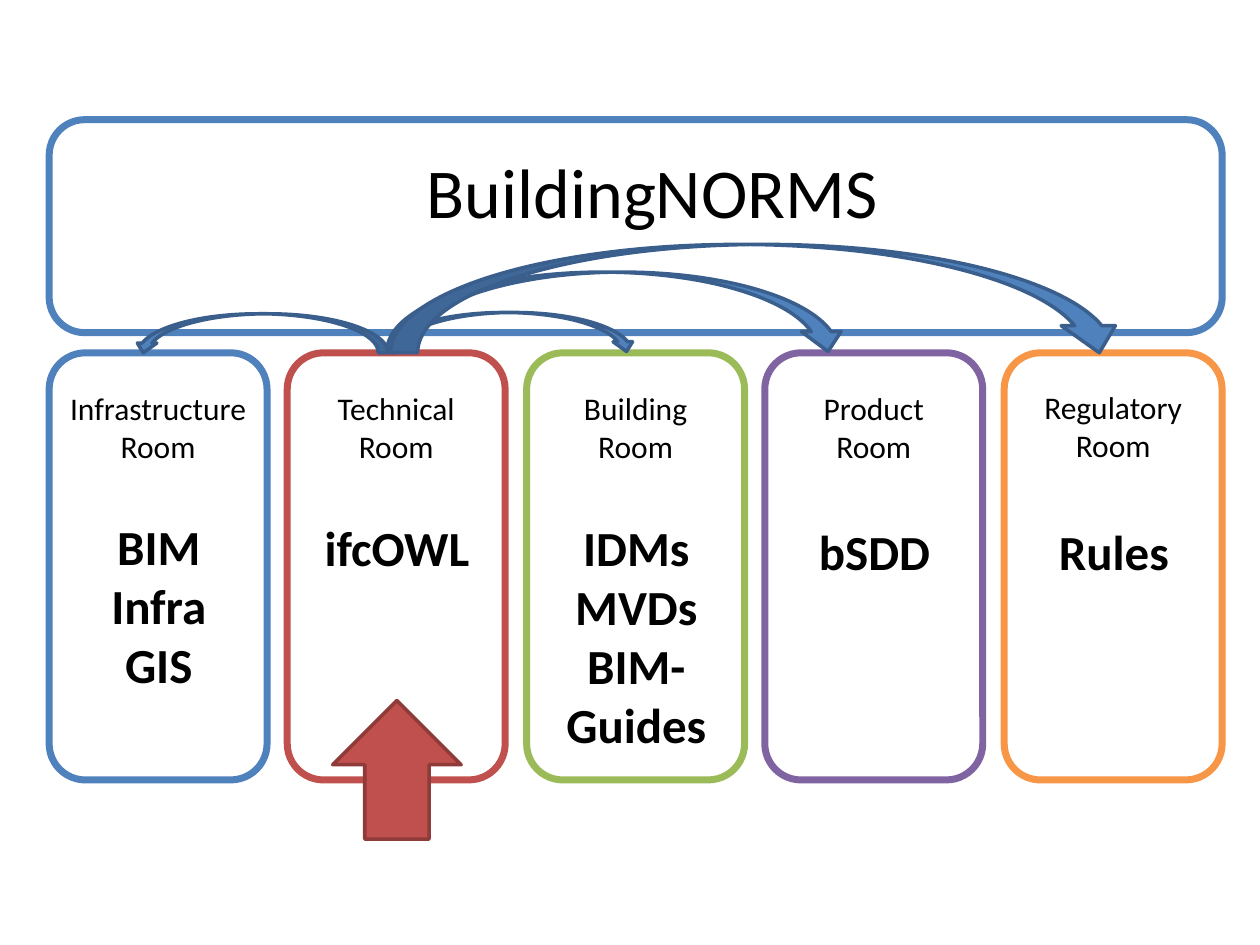
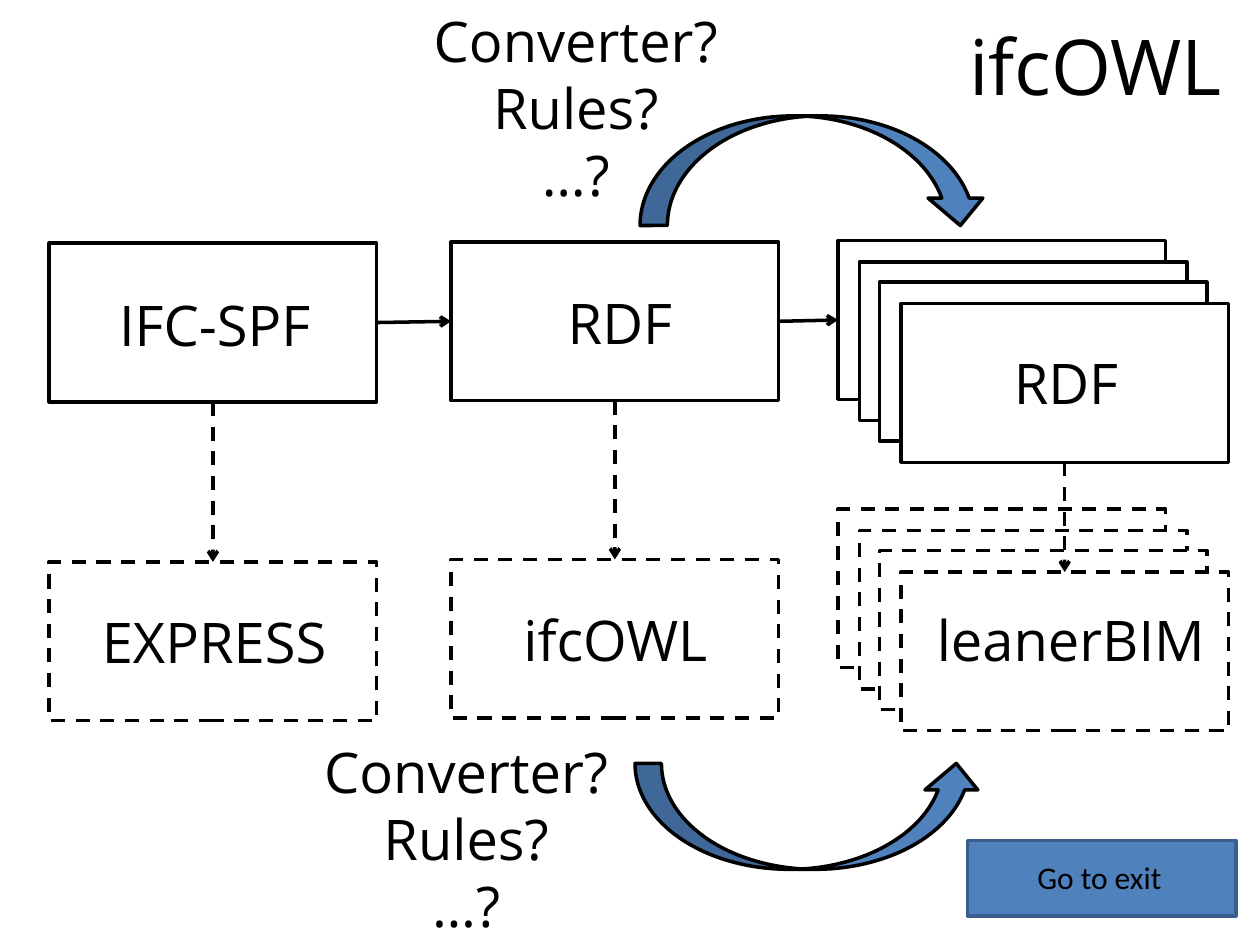
from dataclasses import dataclass
from typing import Optional

from lxml import etree
from pptx import Presentation
from pptx import util as u
from pptx.dml.color import RGBColor
from pptx.enum import dml, shapes, text
from pptx.oxml.ns import qn

# Shared scale, colours and fonts
PX = 9144  # EMU per px, 100 px to the inch
BLACK = RGBColor(0x00, 0x00, 0x00)
WHITE = RGBColor(0xFF, 0xFF, 0xFF)
BLUE = RGBColor(0x4F, 0x81, 0xBD)
DARK_BLUE = RGBColor(0x3A, 0x5F, 0x8C)
RED = RGBColor(0xC0, 0x50, 0x4D)
DARK_RED = RGBColor(0x8E, 0x3B, 0x39)
GREEN = RGBColor(0x9B, 0xBB, 0x59)
PURPLE = RGBColor(0x80, 0x64, 0xA2)
ORANGE = RGBColor(0xF7, 0x96, 0x46)
BODY_FONT, DIAGRAM_FONT = "Calibri", "Open Sans"
KIND = shapes.MSO_SHAPE


@dataclass(frozen=True)
class Box:
    x: int
    y: int
    w: int
    h: int

    def emu(self) -> tuple:
        return tuple(u.Emu(v * PX) for v in (self.x, self.y, self.w, self.h))


@dataclass(frozen=True)
class Room:
    name: str
    color: RGBColor
    topics: str
    name_y: int
    topics_y: int
    topics_h: int


@dataclass(frozen=True)
class Node:
    label: str
    label_box: Box
    x: int
    y: int
    dashed: bool = False
    copies: int = 1


@dataclass(frozen=True)
class Arc:
    box: Box
    flip: Optional[str] = None


# Drawing helpers
def add_block(slide, kind, box: Box, fill: Optional[RGBColor], line: RGBColor,
              width: int = 2, dashed: bool = False):
    sp = slide.shapes.add_shape(kind, *box.emu())
    sp.shadow.inherit = False
    if fill is None:
        sp.fill.background()
    else:
        sp.fill.solid()
        sp.fill.fore_color.rgb = fill
    sp.line.color.rgb = line
    sp.line.width = u.Pt(width)
    if dashed:
        sp.line.dash_style = dml.MSO_LINE.DASH
    return sp


def format_paragraph(p, size: int, font: str, bold: bool, align) -> None:
    p.alignment = align
    p.font.size = u.Pt(size)
    p.font.name = font
    p.font.bold = bold
    p.font.color.rgb = BLACK


def add_label(slide, box: Box, content: str, size: int,
              font: str = BODY_FONT, bold: bool = False) -> None:
    tf = slide.shapes.add_textbox(*box.emu()).text_frame
    tf.word_wrap = True
    tf.auto_size = text.MSO_AUTO_SIZE.SHAPE_TO_FIT_TEXT
    tf.text = content
    for p in tf.paragraphs:
        format_paragraph(p, size, font, bold, text.PP_ALIGN.CENTER)


def add_arc(slide, arc: Arc, line: RGBColor) -> None:
    sp = add_block(slide, KIND.CURVED_DOWN_ARROW, arc.box, BLUE, line)
    if arc.flip:
        sp.element.spPr.get_or_add_xfrm().set(arc.flip, "1")


def add_arrow(slide, start, start_side: int, end, end_side: int, dashed: bool) -> None:
    c = slide.shapes.add_connector(shapes.MSO_CONNECTOR.STRAIGHT, 0, 0, 0, 0)
    c.begin_connect(start, start_side)
    c.end_connect(end, end_side)
    c.line.color.rgb = BLACK
    c.line.width = u.Pt(2)
    if dashed:
        c.line.dash_style = dml.MSO_LINE.DASH
    etree.SubElement(c.line._get_or_add_ln(), qn("a:tailEnd"), type="arrow")
    etree.SubElement(c.element.spPr, qn("a:effectLst"))


def add_node(slide, node: Node) -> tuple:
    """Draw a node, stacked if it has copies; return its back and front boxes."""
    boxes = []
    for i in range(node.copies):
        shift = round(i * 50 / 3)
        boxes.append(add_block(slide, KIND.RECTANGLE,
                               Box(node.x + shift, node.y + shift, 260, 126),
                               WHITE if i else None, BLACK, dashed=node.dashed))
    add_label(slide, node.label_box, node.label, 32, DIAGRAM_FONT)
    return boxes[0], boxes[-1]


# Slide 1: rooms of the organisation
ROOMS = [
    Room("Infrastructure Room", BLUE, "BIM\nInfra GIS", 304, 405, 151),
    Room("Technical Room", RED, "ifcOWL", 304, 406, 57),
    Room("Building\vRoom", GREEN, "IDMs\nMVDs\nBIM-Guides", 304, 406, 199),
    Room("Product\vRoom", PURPLE, "bSDD", 304, 409, 57),
    Room("Regulatory Room", ORANGE, "Rules", 303, 409, 57),
]
ROOM_ARCS = [
    Arc(Box(307, 248, 198, 31)),
    Arc(Box(307, 216, 366, 63)),
    Arc(Box(310, 194, 584, 86)),
    Arc(Box(106, 249, 202, 31), "flipH"),
]


def build_rooms(prs) -> None:
    s = prs.slides.add_slide(prs.slide_layouts[6])
    for i, room in enumerate(ROOMS):
        x = 39 + 379 * i // 2
        add_block(s, KIND.ROUNDED_RECTANGLE, Box(x, 280, 173, 339), WHITE, room.color, 4)
        add_label(s, Box(x, room.name_y, 173, 71), room.name, 18)
        add_label(s, Box(x + 10, room.topics_y, 154, room.topics_h), room.topics, 28,
                  bold=True)

    # Organisation band and arrows
    add_block(s, KIND.ROUNDED_RECTANGLE, Box(39, 95, 931, 169), WHITE, BLUE, 4)
    add_label(s, Box(280, 113, 475, 77), "BuildingNORMS", 40)
    add_block(s, KIND.UP_ARROW, Box(264, 556, 102, 110), RED, DARK_RED)
    for arc in ROOM_ARCS:
        add_arc(s, arc, DARK_BLUE)


# Slide 2: data on top, the schema of each below
FLOW = [
    (Node("IFC-SPF", Box(80, 226, 181, 64), 39, 193),
     Node("EXPRESS", Box(67, 477, 206, 64), 39, 446, dashed=True)),
    (Node("RDF", Box(382, 224, 220, 64), 358, 192),
     Node("ifcOWL", Box(398, 476, 181, 64), 358, 444, dashed=True)),
    (Node("RDF", Box(720, 272, 252, 64), 665, 191, copies=4),
     Node("leanerBIM", Box(720, 476, 260, 64), 665, 404, dashed=True, copies=4)),
]
QUESTIONS = "Converter?\nRules?\n…?"
CONVERSIONS = [
    (Arc(Box(508, 92, 276, 87)), Box(319, 0, 276, 172)),
    (Arc(Box(504, 606, 276, 84), "flipV"), Box(232, 580, 276, 172)),
]


def build_flow(prs) -> None:
    s = prs.slides.add_slide(prs.slide_layouts[5])
    title = s.shapes.title
    title.left, title.top, title.width, title.height = Box(547, -27, 433, 157).emu()
    tf = title.text_frame
    tf.text = "ifcOWL"
    tf.vertical_anchor = text.MSO_ANCHOR.MIDDLE
    format_paragraph(tf.paragraphs[0], 44, DIAGRAM_FONT, False, text.PP_ALIGN.RIGHT)

    # Nodes with arrows to the schema and from the previous data
    previous = None
    for data, schema in FLOW:
        data_back, data_front = add_node(s, data)
        _, schema_front = add_node(s, schema)
        add_arrow(s, data_front, 2, schema_front, 0, dashed=True)
        if previous is not None:
            add_arrow(s, previous, 3, data_back, 1, dashed=False)
        previous = data_front

    # Conversions and their open questions
    for arc, question_box in CONVERSIONS:
        add_arc(s, arc, BLACK)
        add_label(s, question_box, QUESTIONS, 32, DIAGRAM_FONT)

    # Exit button
    add_block(s, KIND.RECTANGLE, Box(768, 667, 213, 60), BLUE, DARK_BLUE)
    add_label(s, Box(783, 676, 179, 40), "Go to exit", 18)


def main() -> None:
    prs = Presentation()
    prs.slide_width, prs.slide_height = u.Emu(1000 * PX), u.Emu(750 * PX)
    build_rooms(prs)
    build_flow(prs)
    prs.save("out.pptx")


if __name__ == "__main__":
    main()
